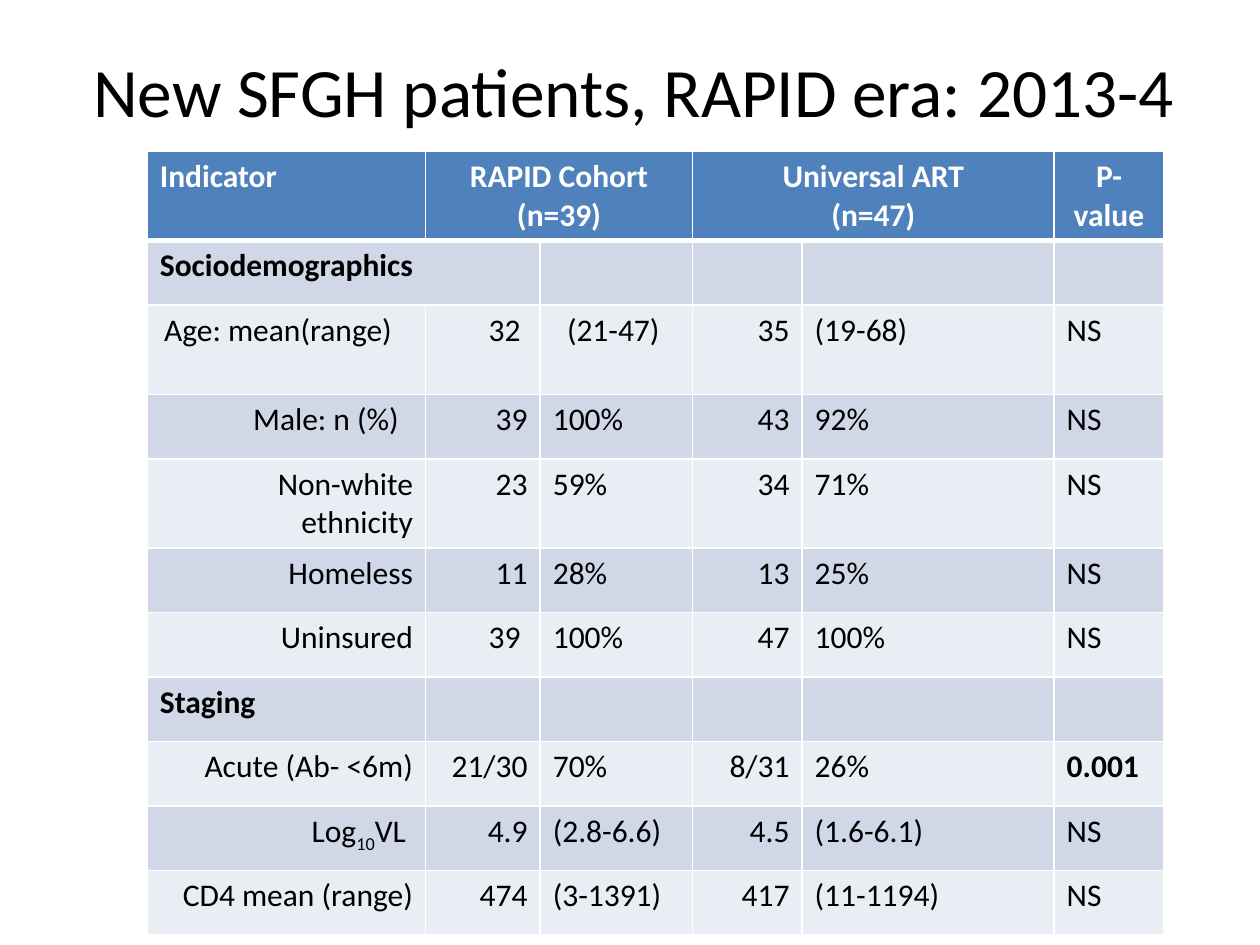
from lxml.etree import SubElement as Sub
from pptx import Presentation
from pptx.dml.color import RGBColor as RGB
from pptx.enum.text import MSO_ANCHOR as Anchor, PP_ALIGN as Al
from pptx.oxml.ns import qn
from pptx.util import Cm, Pt

WHITE, BLACK, BLUE = "FFFFFF", "000000", "4F81BD"
BANDS = ("D0D8E8", "E9EDF4")

# Table content: text between underscores is subscript
HEAD = ["Indicator", "RAPID Cohort (n=39)", "", "Universal ART\n(n=47)", "", "P-value"]
ROWS = [
    ["Sociodemographics"],
    ["Age: mean(range)", "32 ", "(21-47)", "35", "(19-68)", "NS"],
    ["Male: n (%)", "39", "100%", "43", "92%", "NS"],
    ["Non-white ethnicity", "23", "59%", "34", "71%", "NS"],
    ["Homeless", "11", "28%", "13", "25%", "NS"],
    ["Uninsured", "39 ", "100%", "47", "100%", "NS"],
    ["Staging"],
    ["Acute (Ab- <6m)", "21/30", "70%", "8/31", "26%", "0.001"],
    ["Log_10_VL ", "4.9", "(2.8-6.6)", "4.5", "(1.6-6.1)", "NS"],
    ["CD4 mean (range)", "474", "(3-1391)", "417", "(11-1194)", "NS"],
]
WIDTHS = (5.61, 2.31, 3.07, 2.21, 5.08, 2.21)
ROW, TALL = 1.3, 1.8
TALL_ROWS = (0, 2, 4)
RIGHT_COLS = (0, 1, 3)


def color(code):
    return RGB.from_string(code)


class Page:
    font = "Calibri"

    def __init__(self, slide):
        self.slide = slide

    def style(self, para, size, tint, bold=False, align=Al.LEFT):
        para.alignment = align
        for run in para.runs:
            run.font.name, run.font.size = self.font, Pt(size)
            run.font.bold = bold
            run.font.color.rgb = color(tint)

    def title(self, text, x, y, w, h):
        frame = self.slide.shapes.add_textbox(Cm(x), Cm(y), Cm(w), Cm(h)).text_frame
        frame.word_wrap = True
        frame.vertical_anchor = Anchor.MIDDLE
        frame.text = text
        self.style(frame.paragraphs[0], 39.6, BLACK, align=Al.CENTER)

    def table(self, x, y, widths, heights):
        shape = self.slide.shapes.add_table(
            len(heights), len(widths), Cm(x), Cm(y), Cm(sum(widths)), Cm(sum(heights)))
        grid = shape.table
        for col, w in zip(grid.columns, widths):
            col.width = Cm(w)
        for row, h in zip(grid.rows, heights):
            row.height = Cm(h)
        return grid

    def paint(self, cell, fill, top=1, base=1):
        props = cell._tc.get_or_add_tcPr()
        for side, width in (("L", 1), ("R", 1), ("T", top), ("B", base)):
            line = Sub(props, qn("a:ln" + side), w=str(Pt(width)))
            Sub(Sub(line, qn("a:solidFill")), qn("a:srgbClr"), val=WHITE)
        cell.fill.solid()
        cell.fill.fore_color.rgb = color(fill)

    def label(self, cell, text, tint, bold, align):
        frame = cell.text_frame
        frame.text = text.replace("_", "")
        if "_" in text:
            para = frame.paragraphs[0]
            para.text = ""
            for i, part in enumerate(text.split("_")):
                run = para.add_run()
                run.text = part
                if i % 2:
                    run.font._element.set("baseline", "-25000")
        for para in frame.paragraphs:
            self.style(para, 18, tint, bold, align)


def main():
    deck = Presentation()
    deck.slide_width, deck.slide_height = Cm(25.4), Cm(19.05)
    page = Page(deck.slides.add_slide(deck.slide_layouts[6]))

    # Title
    page.title("New SFGH patients, RAPID era: 2013-4", 1.35, 0.23, 22.86, 3.18)

    # Table grid
    heights = [TALL if r in TALL_ROWS else ROW for r in range(len(ROWS) + 1)]
    grid = page.table(2.97, 3.05, WIDTHS, heights)

    # Header row
    for c, text in enumerate(HEAD):
        cell = grid.cell(0, c)
        page.paint(cell, BLUE, base=3)
        page.label(cell, text, WHITE, True, Al.CENTER if c else Al.LEFT)

    # Body rows, with section names and the significant value in bold
    for r, row in enumerate(ROWS, 1):
        section = len(row) == 1
        for c in range(len(WIDTHS)):
            cell = grid.cell(r, c)
            page.paint(cell, BANDS[(r - 1) % 2], top=3 if r == 1 else 1)
            text = row[c] if c < len(row) else ""
            right = c in RIGHT_COLS and not section
            page.label(cell, text, BLACK, section or text == "0.001",
                       Al.RIGHT if right else Al.LEFT)

    # Merged cells and indents
    for r, c in ((0, 1), (0, 3), (1, 0)):
        grid.cell(r, c).merge(grid.cell(r, c + 1))
    grid.cell(2, 0).margin_left = Cm(0.1)
    grid.cell(2, 0).margin_right = Cm(0.68)
    grid.cell(2, 2).margin_left = Cm(0.54)
    grid.cell(3, 0).margin_right = Cm(0.54)

    deck.save("out.pptx")


if __name__ == "__main__":
    main()
